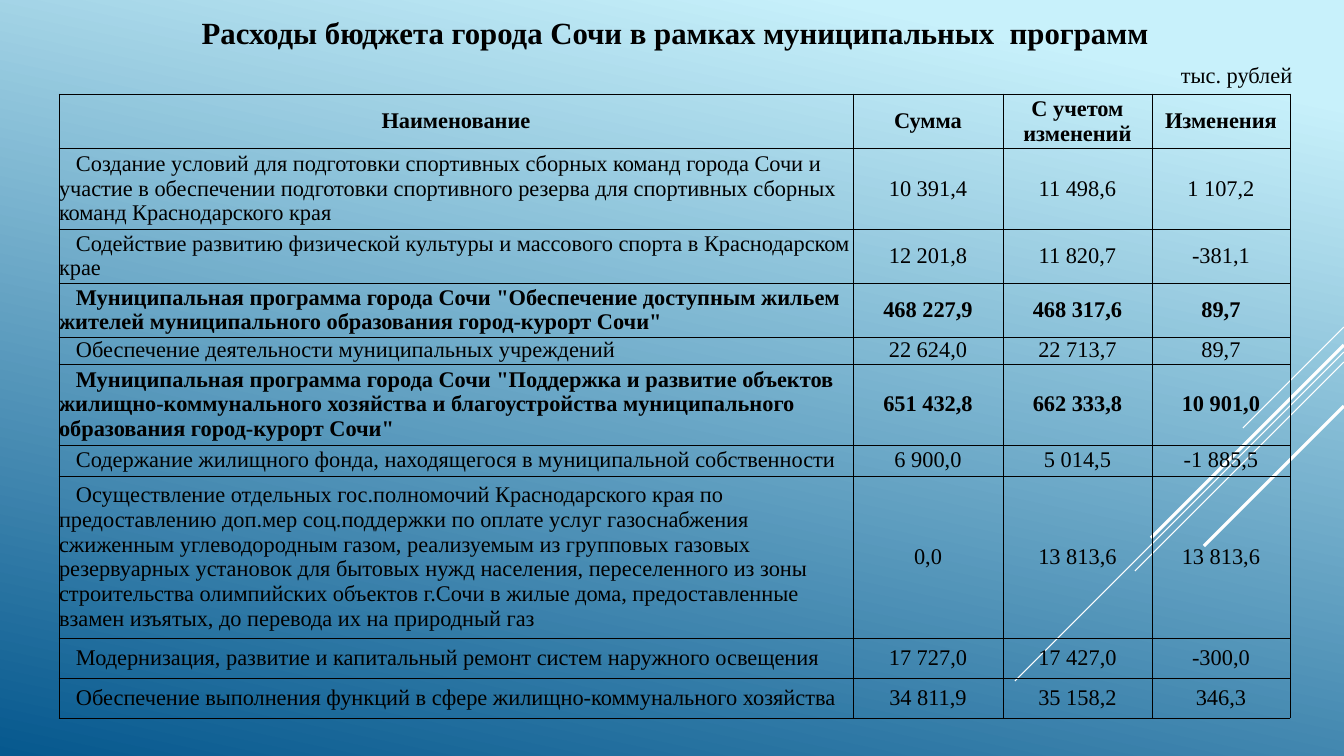
from lxml import etree
from pptx import Presentation
from pptx.dml.color import RGBColor
from pptx.enum.shapes import MSO_CONNECTOR
from pptx.enum.text import MSO_ANCHOR, PP_ALIGN
from pptx.oxml.ns import qn
from pptx.util import Pt

EMU_PER_PX = 914400 / 100.8
SLIDE_WIDTH, SLIDE_HEIGHT = 1344, 756
TITLE_ONLY = 5
STRAIGHT = MSO_CONNECTOR.STRAIGHT
LEFT, CENTER = PP_ALIGN.LEFT, PP_ALIGN.CENTER
TOP, MIDDLE = MSO_ANCHOR.TOP, MSO_ANCHOR.MIDDLE

BLACK = RGBColor(0x00, 0x00, 0x00)
WHITE = RGBColor(0xFF, 0xFF, 0xFF)
SKY = RGBColor(0xC8, 0xF1, 0xFB)
DEEP_BLUE = RGBColor(0x06, 0x58, 0x8E)

FONT = "Times New Roman"
NAME_INDENT = 17

# Start height on the right edge, horizontal run, width in points
RAYS = [(327, 101, 0.75), (352, 329, 0.75), (362, 209, 0.75),
        (345, 193, 2.25), (406, 140, 2.25)]

COLUMN_WIDTHS = [794, 150, 149, 138]
HEADINGS = ["Наименование", "Сумма", "С учетом изменений", "Изменения"]
HEADING_HEIGHT = 54

# Row height, bold, name, amount, amended amount, change
EXPENSES = [
    (81, False, "Создание условий для подготовки спортивных сборных команд города Сочи и "
     "участие в обеспечении подготовки спортивного резерва для спортивных сборных "
     "команд Краснодарского края", "10 391,4", "11 498,6", "1 107,2"),
    (54, False, "Содействие развитию физической культуры и массового спорта в "
     "Краснодарском крае", "12 201,8", "11 820,7", "-381,1"),
    (54, True, 'Муниципальная программа города Сочи "Обеспечение доступным жильем '
     'жителей муниципального образования город-курорт Сочи"',
     "468 227,9", "468 317,6", "89,7"),
    (27, False, "Обеспечение деятельности муниципальных учреждений",
     "22 624,0", "22 713,7", "89,7"),
    (81, True, 'Муниципальная программа города Сочи "Поддержка и развитие объектов '
     "жилищно-коммунального хозяйства и благоустройства муниципального "
     'образования город-курорт Сочи"', "651 432,8", "662 333,8", "10 901,0"),
    (31, False, "Содержание жилищного фонда, находящегося в муниципальной собственности",
     "6 900,0", "5 014,5", "-1 885,5"),
    (162, False, "Осуществление отдельных гос.полномочий Краснодарского края по "
     "предоставлению доп.мер соц.поддержки по оплате услуг газоснабжения "
     "сжиженным углеводородным газом, реализуемым из групповых газовых "
     "резервуарных установок для бытовых нужд населения, переселенного из зоны "
     "строительства олимпийских объектов г.Сочи в жилые дома, предоставленные "
     "взамен изъятых, до перевода их на природный газ",
     "0,0", "13 813,6", "13 813,6"),
    (40, False, "Модернизация, развитие и капитальный ремонт систем наружного освещения",
     "17 727,0", "17 427,0", "-300,0"),
    (40, False, "Обеспечение выполнения функций в сфере жилищно-коммунального хозяйства",
     "34 811,9", "35 158,2", "346,3"),
]


def px(length):
    return round(length * EMU_PER_PX)


def set_attributes(target, values):
    for name, value in values.items():
        setattr(target, name, value)


def write(frame, text, size, bold=False, align=LEFT):
    paragraph = frame.paragraphs[0]
    paragraph.alignment = align
    run = paragraph.add_run()
    run.text = text
    set_attributes(run.font, {"name": FONT, "size": Pt(size), "bold": bold})
    run.font.color.rgb = BLACK
    return paragraph


def paint_background(slide):
    fill = slide.background.fill
    fill.gradient()
    fill.gradient_angle = 258
    for stop, position, color in zip(fill.gradient_stops, (0.1, 1), (SKY, DEEP_BLUE)):
        stop.position = position
        stop.color.rgb = color


def add_ray(slide, start_y, run, width):
    """Draw a 45-degree line down and left from the slide's right edge."""
    ray = slide.shapes.add_connector(
        STRAIGHT, px(SLIDE_WIDTH), px(start_y), px(SLIDE_WIDTH - run), px(start_y + run))
    ray.line.color.rgb = WHITE
    ray.line.width = Pt(width)
    etree.SubElement(ray._element.spPr, qn("a:effectLst"))


def add_title(slide, text):
    title = slide.shapes.title
    set_attributes(title, {"left": px(190), "top": px(9),
                           "width": px(970), "height": px(47)})
    set_attributes(title.text_frame, {"word_wrap": True, "vertical_anchor": TOP})
    write(title.text_frame, text, 22, True, CENTER)


def add_unit_label(slide, text):
    label = slide.shapes.add_textbox(px(1171), px(56), px(152), px(37))
    label.text_frame.word_wrap = True
    write(label.text_frame, text, 16)


def add_borders(cell):
    properties = cell._tc.get_or_add_tcPr()
    for side in ("a:lnL", "a:lnR", "a:lnT", "a:lnB"):
        border = etree.SubElement(properties, qn(side), w=str(Pt(0.5)))
        fill = etree.SubElement(border, qn("a:solidFill"))
        etree.SubElement(fill, qn("a:srgbClr"), val=str(BLACK))


def fill_cell(cell, text, bold, align):
    set_attributes(cell, {"margin_left": 0, "margin_right": 0, "margin_top": 0,
                          "margin_bottom": 0, "vertical_anchor": MIDDLE})
    add_borders(cell)
    cell.fill.background()
    paragraph = write(cell.text_frame, text, 16, bold, align)
    if align == LEFT:
        set_indent = paragraph._p.get_or_add_pPr().set
        set_indent("marL", "0")
        set_indent("indent", str(px(NAME_INDENT)))


def add_expense_table(slide):
    rows = [(HEADING_HEIGHT, True, *HEADINGS), *EXPENSES]
    total_height = sum(row[0] for row in rows)
    table = slide.shapes.add_table(
        len(rows), len(COLUMN_WIDTHS), px(59), px(94),
        px(sum(COLUMN_WIDTHS)), px(total_height)).table
    set_attributes(table, {"first_row": False, "horz_banding": False})
    for column, width in zip(table.columns, COLUMN_WIDTHS):
        column.width = px(width)
    for row_index, (height, bold, *texts) in enumerate(rows):
        table.rows[row_index].height = px(height)
        for column_index, text in enumerate(texts):
            is_name = row_index > 0 and column_index == 0
            fill_cell(table.cell(row_index, column_index), text, bold,
                      LEFT if is_name else CENTER)


def main():
    deck = Presentation()
    set_attributes(deck, {"slide_width": px(SLIDE_WIDTH), "slide_height": px(SLIDE_HEIGHT)})
    slide = deck.slides.add_slide(deck.slide_layouts[TITLE_ONLY])
    paint_background(slide)
    for ray in RAYS:
        add_ray(slide, *ray)
    add_title(slide, "Расходы бюджета города Сочи в рамках муниципальных  программ")
    add_unit_label(slide, "тыс. рублей")
    add_expense_table(slide)
    deck.save("out.pptx")


if __name__ == "__main__":
    main()
